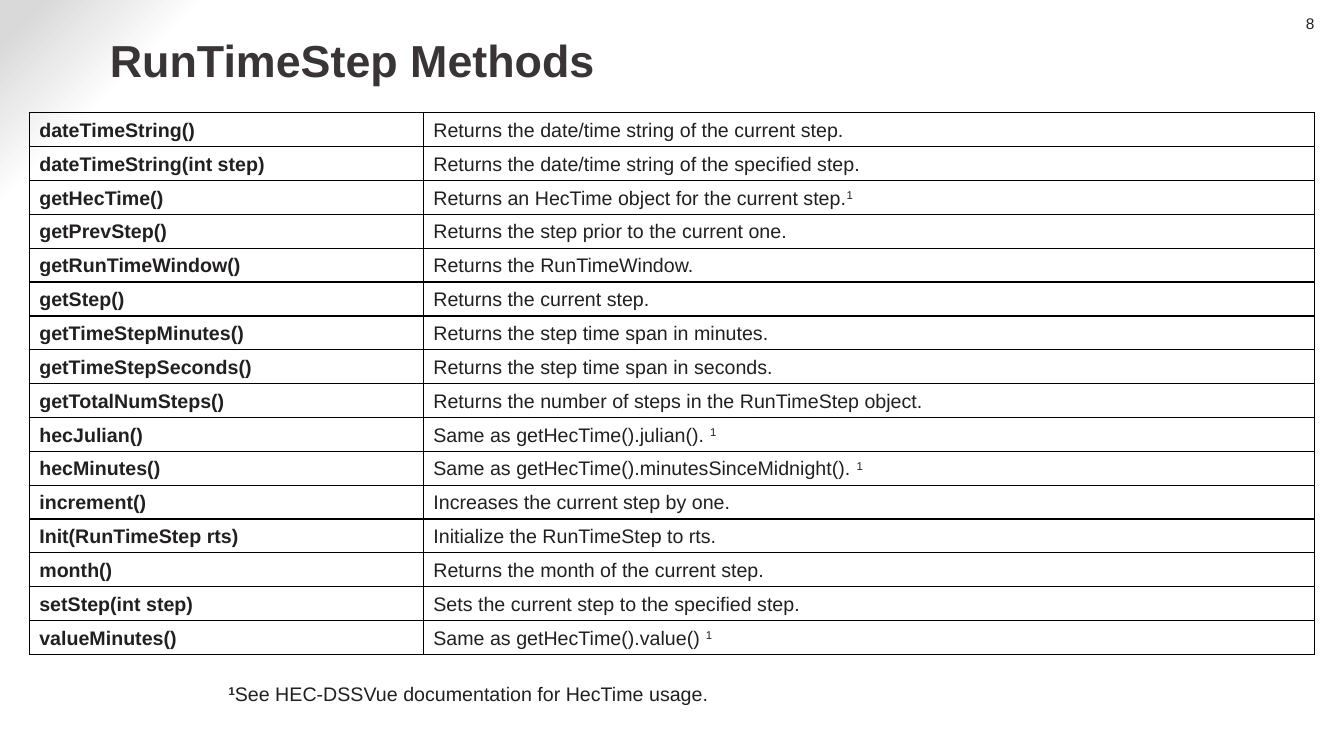
from lxml import etree
from pptx import Presentation
from pptx.dml.color import RGBColor
from pptx.enum import text as t
from pptx.oxml import parse_xml
from pptx.oxml.ns import nsdecls, qn
from pptx.util import Pt

INK = RGBColor(0x22, 0x1F, 0x20)
TITLE_INK = RGBColor(0x39, 0x34, 0x36)
BORDER = RGBColor(0, 0, 0)
WHITE = RGBColor(0xFF, 0xFF, 0xFF)
GREY = RGBColor(0xD9, 0xD9, 0xD9)

METHODS = [
    ("dateTimeString()", "Returns the date/time string of the current step.", ""),
    ("dateTimeString(int step)", "Returns the date/time string of the specified step.", ""),
    ("getHecTime()", "Returns an HecTime object for the current step.", "1"),
    ("getPrevStep()", "Returns the step prior to the current one.", ""),
    ("getRunTimeWindow()", "Returns the RunTimeWindow.", ""),
    ("getStep()", "Returns the current step.", ""),
    ("getTimeStepMinutes()", "Returns the step time span in minutes.", ""),
    ("getTimeStepSeconds()", "Returns the step time span in seconds.", ""),
    ("getTotalNumSteps()", "Returns the number of steps in the RunTimeStep object.", ""),
    ("hecJulian()", "Same as getHecTime().julian(). ", "1"),
    ("hecMinutes()", "Same as getHecTime().minutesSinceMidnight(). ", "1"),
    ("increment()", "Increases the current step by one.", ""),
    ("Init(RunTimeStep rts)", "Initialize the RunTimeStep to rts.", ""),
    ("month()", "Returns the month of the current step.", ""),
    ("setStep(int step)", "Sets the current step to the specified step.", ""),
    ("valueMinutes()", "Same as getHecTime().value() ", "1"),
]


def write(paragraph, text, size=14, color=INK, bold=False, font="Arial",
          align=t.PP_ALIGN.LEFT, superscript=False):
    paragraph.alignment = align
    run = paragraph.add_run()
    run.text = text
    run.font.name = font
    run.font.size = Pt(size)
    run.font.bold = bold
    run.font.color.rgb = color
    if superscript:
        run.font._element.set("baseline", "30000")


class SlideBuilder:
    def __init__(self, presentation, border_width=1):
        self.border_width = border_width
        self.slide = presentation.slides.add_slide(presentation.slide_layouts[5])

    def background(self, stops):
        self.slide.background.fill.gradient()
        gradient = self.slide.element.find(".//" + qn("a:gradFill"))
        stop_xml = "".join(
            f'<a:gs pos="{position * 1000}"><a:srgbClr val="{color}"/></a:gs>'
            for position, color in stops)
        gradient.getparent().replace(gradient, parse_xml(
            f'<a:gradFill {nsdecls("a")} rotWithShape="1"><a:gsLst>{stop_xml}</a:gsLst>'
            '<a:path path="circle"><a:fillToRect l="100000" t="100000"/></a:path>'
            '</a:gradFill>'))

    def frame(self, shape, insets, anchor):
        frame = shape.text_frame
        frame.word_wrap = True
        frame.auto_size = t.MSO_AUTO_SIZE.NONE
        frame.vertical_anchor = anchor
        (frame.margin_left, frame.margin_top,
         frame.margin_right, frame.margin_bottom) = map(Pt, insets)
        return frame.paragraphs[0]

    def title(self, text, left, top, width, height):
        shape = self.slide.shapes.title
        shape.left, shape.top, shape.width, shape.height = map(Pt, (left, top, width, height))
        paragraph = self.frame(shape, (3.6, 0, 0, 0), t.MSO_ANCHOR.MIDDLE)
        write(paragraph, text, size=32, color=TITLE_INK, bold=True)

    def text_box(self, left, top, width, height, insets, anchor=t.MSO_ANCHOR.TOP):
        shape = self.slide.shapes.add_textbox(*map(Pt, (left, top, width, height)))
        return self.frame(shape, insets, anchor)

    def borders(self, cell):
        properties = cell._tc.get_or_add_tcPr()
        for position, side in enumerate(("lnL", "lnR", "lnT", "lnB")):
            line = etree.Element(qn(f"a:{side}"), w=str(Pt(self.border_width)))
            fill = etree.SubElement(line, qn("a:solidFill"))
            etree.SubElement(fill, qn("a:srgbClr"), val=str(BORDER))
            properties.insert(position, line)

    def method_table(self, methods, left, top, widths, row_height):
        table = self.slide.shapes.add_table(
            len(methods), len(widths), Pt(left), Pt(top),
            Pt(sum(widths)), Pt(row_height * len(methods))).table
        table.first_row = table.horz_banding = False
        for column, width in zip(table.columns, widths):
            column.width = Pt(width)
        for row, (name, description, mark) in zip(table.rows, methods):
            row.height = Pt(row_height)
            for cell in row.cells:
                cell.fill.background()
                cell.vertical_anchor = t.MSO_ANCHOR.BOTTOM
                self.borders(cell)
            name_text, description_text = (
                cell.text_frame.paragraphs[0] for cell in row.cells)
            write(name_text, name, bold=True)
            write(description_text, description)
            if mark:
                write(description_text, mark, superscript=True)


def main():
    presentation = Presentation()
    presentation.slide_width, presentation.slide_height = Pt(960), Pt(540)
    builder = SlideBuilder(presentation)
    builder.background([(87, WHITE), (90, WHITE), (98, GREY)])
    page_number = builder.text_box(895.7, 10, 43.2, 13.7, (7.2, 0, 0, 0))
    write(page_number, "8", size=11, align=t.PP_ALIGN.RIGHT)
    builder.method_table(METHODS, 20.9, 80.6, (281.5, 636.5), 24.2)
    builder.title("RunTimeStep Methods", 74.9, 10, 818, 65.5)
    footnote = builder.text_box(156.2, 468, 648, 35.6, (7.2, 3.6, 7.2, 0),
                                t.MSO_ANCHOR.BOTTOM)
    write(footnote, "1", bold=True, superscript=True)
    write(footnote, "See HEC-DSSVue documentation for HecTime usage.")
    presentation.save("out.pptx")


if __name__ == "__main__":
    main()
